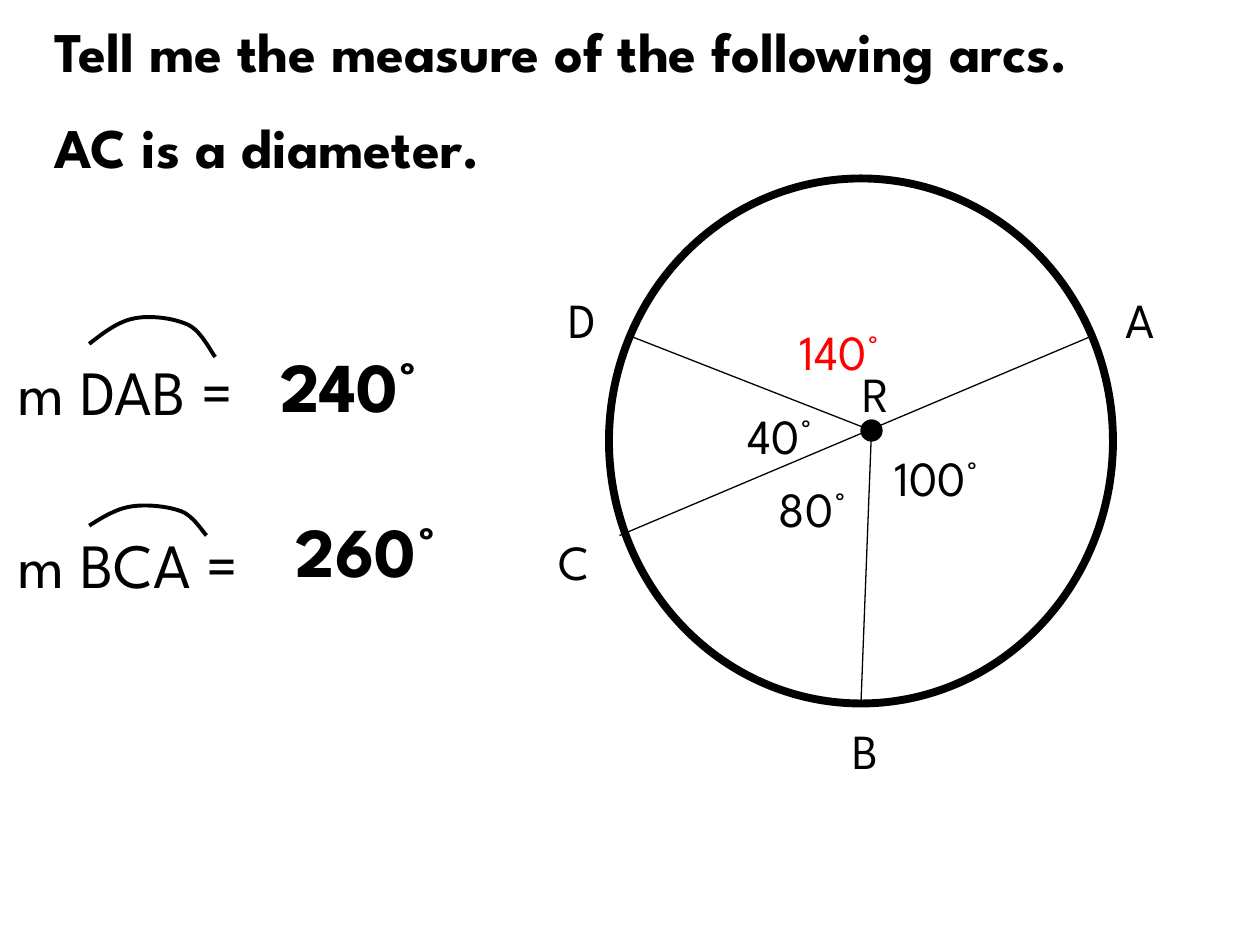
from pptx import Presentation
from pptx.dml.color import RGBColor
from pptx.enum.shapes import MSO_CONNECTOR, MSO_SHAPE
from pptx.enum.text import MSO_ANCHOR, MSO_AUTO_SIZE, PP_ALIGN
from pptx.oxml.ns import qn
from pptx.util import Pt
from lxml.etree import SubElement

FONT = "League Spartan"
BLACK, RED = "000000", "FF0000"


def write(frame, lines, size, color=BLACK, bold=False):
    """Fill a text frame with left-aligned lines, one paragraph each."""
    frame.word_wrap = True
    frame.auto_size = MSO_AUTO_SIZE.NONE
    frame.vertical_anchor = MSO_ANCHOR.TOP
    for index, line in enumerate(lines):
        paragraph = frame.add_paragraph() if index else frame.paragraphs[0]
        paragraph.alignment = PP_ALIGN.LEFT
        paragraph.space_before = Pt(size / 2 if index else 0)
        run = paragraph.add_run()
        run.text = line
        run.font.name = FONT
        run.font.size = Pt(size)
        run.font.bold = bold
        run.font.color.rgb = RGBColor.from_string(color)


def outline(shape, width):
    shape.line.color.rgb = RGBColor.from_string(BLACK)
    shape.line.width = Pt(width)


presentation = Presentation()
presentation.slide_width, presentation.slide_height = Pt(720), Pt(540)
slide = presentation.slides.add_slide(presentation.slide_layouts[5])
shapes = slide.shapes

# Heading
title = shapes.title
title.left, title.top, title.width, title.height = Pt(24), Pt(6), Pt(660), Pt(104)
write(title.text_frame, ["Tell me the measure of the following arcs.", "AC is a diameter."],
      32, bold=True)

# Circle, its diameter and radii, and the centre point
circle = shapes.add_shape(MSO_SHAPE.OVAL, Pt(348), Pt(102), Pt(288), Pt(300))
circle.shadow.inherit = False
circle.fill.background()
outline(circle, 4.5)

point_a, point_b, point_c, point_d = (624, 192), (492, 402), (354, 306), (360, 192)
center = (498, 246)
for start, end in [(point_c, point_a), (center, point_b), (center, point_d)]:
    segment = shapes.add_connector(MSO_CONNECTOR.STRAIGHT, *map(Pt, start + end))
    SubElement(segment._element.spPr, qn("a:effectLst"))
    outline(segment, 0.75)

dot = shapes.add_shape(MSO_SHAPE.OVAL, Pt(center[0] - 6), Pt(center[1] - 6), Pt(12), Pt(12))
dot.shadow.inherit = False
dot.fill.solid()
dot.fill.fore_color.rgb = RGBColor.from_string(BLACK)
outline(dot, 0.75)

# Text: left, top, width, height, size, color, bold
for text, left, top, width, height, size, color, bold in [
    ("80°", 438, 270, 58, 41, 28, BLACK, False),
    ("100°", 504, 252, 96, 41, 28, BLACK, False),
    ("40°", 420, 228, 96, 41, 28, BLACK, False),
    ("140°", 450, 180, 96, 41, 28, RED, False),
    ("A", 636, 162, 48, 41, 28, BLACK, False),
    ("B", 480, 408, 48, 41, 28, BLACK, False),
    ("C", 312, 300, 48, 41, 28, BLACK, False),
    ("D", 318, 162, 48, 41, 28, BLACK, False),
    ("R", 486, 204, 48, 41, 28, BLACK, False),
    ("m DAB =", 3, 198, 174, 50, 36, BLACK, False),
    ("m BCA =", 3, 297, 168, 50, 36, BLACK, False),
    ("240°", 153, 192, 138, 55, 40, BLACK, True),
    ("260°", 162, 286.5, 138, 55, 40, BLACK, True),
]:
    box = shapes.add_textbox(Pt(left), Pt(top), Pt(width), Pt(height))
    write(box.text_frame, [text], size, color, bold)

# Arc marks: one Bezier outline in a unit square, scaled to each place
ARC_CURVES = [
    [(0, 0.69), (0.11, 0.43), (0.23, 0.15), (0.36, 0.08)],
    [(0.36, 0.08), (0.49, 0), (0.68, 0.08), (0.79, 0.24)],
    [(0.79, 0.24), (0.89, 0.39), (0.97, 0.89), (1, 1)],
]
STEPS = 12
arc_points = [ARC_CURVES[0][0]]
for curve in ARC_CURVES:
    for step in range(1, STEPS + 1):
        t = step / STEPS
        weights = ((1 - t) ** 3, 3 * t * (1 - t) ** 2, 3 * t ** 2 * (1 - t), t ** 3)
        arc_points.append(tuple(sum(weight * point[axis] for weight, point in zip(weights, curve))
                                for axis in (0, 1)))

for left, top, width, height in [(51, 180, 72, 24), (51, 288, 67, 18)]:
    places = [(Pt(left + x * width), Pt(top + y * height)) for x, y in arc_points]
    builder = shapes.build_freeform(*places[0])
    builder.add_line_segments(places[1:], close=False)
    arc = builder.convert_to_shape()
    arc.shadow.inherit = False
    arc.fill.background()
    outline(arc, 2.25)

presentation.save("out.pptx")
